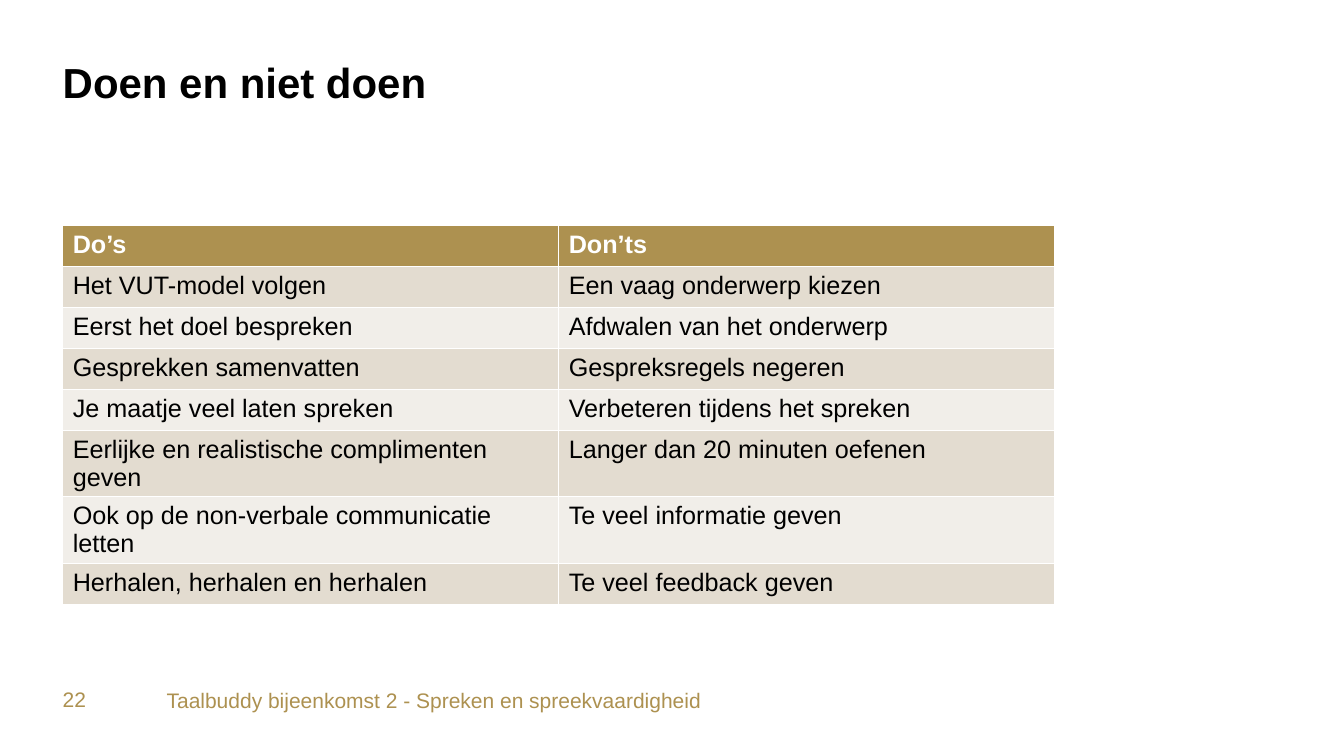
from dataclasses import dataclass

from pptx import Presentation
from pptx.dml.color import RGBColor
from pptx.enum.text import MSO_ANCHOR, MSO_AUTO_SIZE, PP_ALIGN
from pptx.util import Cm, Pt

TOP = MSO_ANCHOR.TOP
NO_AUTOFIT = MSO_AUTO_SIZE.NONE
LEFT = PP_ALIGN.LEFT
TITLE_ONLY = 5


@dataclass(frozen=True)
class Theme:
    """Colours, font and type sizes of the slide."""

    font: str = "Arial"
    gold: str = "AD9150"
    dark_band: str = "E3DCD0"
    light_band: str = "F1EEE9"
    black: str = "000000"
    white: str = "FFFFFF"
    title_size: int = 30
    table_size: int = 18
    footer_size: int = 15


THEME = Theme()

ADVICE = [
    ("Do’s", "Don’ts"),
    ("Het VUT-model volgen", "Een vaag onderwerp kiezen"),
    ("Eerst het doel bespreken", "Afdwalen van het onderwerp"),
    ("Gesprekken samenvatten", "Gespreksregels negeren"),
    ("Je maatje veel laten spreken", "Verbeteren tijdens het spreken"),
    ("Eerlijke en realistische complimenten geven", "Langer dan 20 minuten oefenen"),
    ("Ook op de non-verbale communicatie letten", "Te veel informatie geven"),
    ("Herhalen, herhalen en herhalen", "Te veel feedback geven"),
]


def write_text(text_frame, text, *, size, color, bold=False, line_spacing=None):
    """Write one left-aligned paragraph with the given format."""
    paragraph = text_frame.paragraphs[0]
    paragraph.alignment = LEFT
    paragraph.line_spacing = line_spacing
    run = paragraph.add_run()
    run.text = text
    run.font.name = THEME.font
    run.font.size = Pt(size)
    run.font.bold = bold
    run.font.color.rgb = RGBColor.from_string(color)


def prepare_frame(shape):
    """Give a text shape no margins, wrapping lines and a top anchor."""
    text_frame = shape.text_frame
    text_frame.margin_left = text_frame.margin_right = 0
    text_frame.margin_top = text_frame.margin_bottom = 0
    text_frame.word_wrap = True
    text_frame.auto_size = NO_AUTOFIT
    text_frame.vertical_anchor = TOP
    return text_frame


def place_title(slide, text, left, top, width, height):
    """Move the title placeholder into its box and fill it."""
    title = slide.shapes.title
    title.left, title.top, title.width, title.height = left, top, width, height
    write_text(prepare_frame(title), text, size=THEME.title_size,
               color=THEME.black, bold=True, line_spacing=0.9)


def add_advice_table(slide, rows, left, top, width, height):
    """Add a table with a gold header and alternating bands."""
    frame = slide.shapes.add_table(len(rows), len(rows[0]), left, top, width, height)
    table = frame.table
    for row_index, texts in enumerate(rows):
        is_header = row_index == 0
        band = THEME.dark_band if row_index % 2 else THEME.light_band
        for column_index, text in enumerate(texts):
            cell = table.cell(row_index, column_index)
            cell.fill.solid()
            cell.fill.fore_color.rgb = RGBColor.from_string(THEME.gold if is_header else band)
            write_text(cell.text_frame, text, size=THEME.table_size,
                       color=THEME.white if is_header else THEME.black, bold=is_header)


def add_footer(slide, number, text, left, top, width, height):
    """Add the slide number and, to its right, the footer text."""
    text_offset = Cm(2.62)
    parts = [
        (number, left, top, Cm(2.13)),
        (text, left + text_offset, top + Cm(0.03), width - text_offset),
    ]
    for content, part_left, part_top, part_width in parts:
        box = slide.shapes.add_textbox(part_left, part_top, part_width, height)
        write_text(prepare_frame(box), content, size=THEME.footer_size, color=THEME.gold)


def main():
    """Build the slide and save the presentation."""
    presentation = Presentation()
    presentation.slide_width = Cm(33.87)
    presentation.slide_height = Cm(19.05)
    slide = presentation.slides.add_slide(presentation.slide_layouts[TITLE_ONLY])
    margin = Cm(1.58)
    place_title(slide, "Doen en niet doen", margin, Cm(1.58), Cm(30.63), Cm(3.33))
    add_advice_table(slide, ADVICE, margin, Cm(5.69), Cm(25), Cm(8.24))
    add_footer(slide, "22", "Taalbuddy bijeenkomst 2 - Spreken en spreekvaardigheid",
               margin, Cm(17.3), Cm(30), Cm(0.85))
    presentation.save("out.pptx")


if __name__ == "__main__":
    main()
